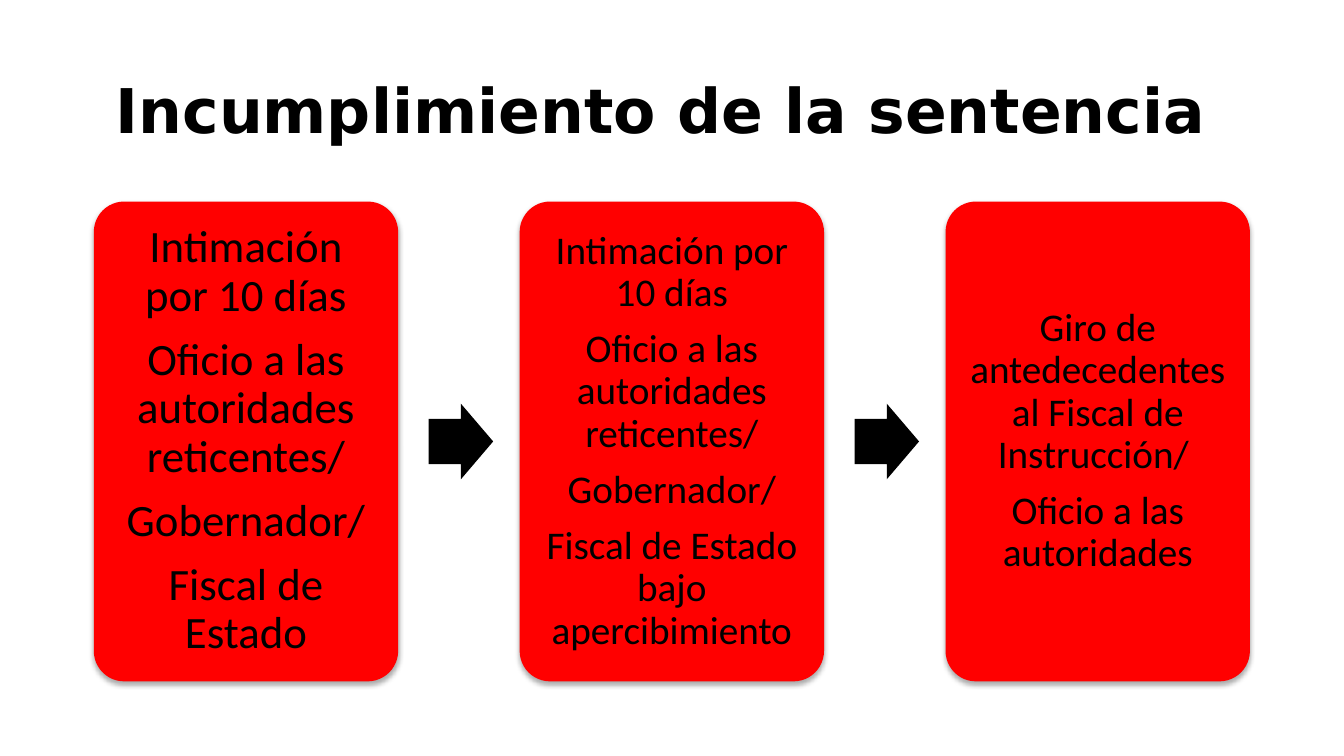
from lxml import etree
from pptx import Presentation
from pptx.dml.color import RGBColor
from pptx.enum import shapes, text
from pptx.oxml import ns
from pptx.util import Pt

# Content
TITLE = "Incumplimiento de la sentencia "
STEPS = [  # font size, inset, paragraphs
    (32, 9.6, ["Intimación por 10 días", "Oficio a las autoridades reticentes/",
               "Gobernador/", "Fiscal de Estado"]),
    (28, 8.4, ["Intimación por 10 días", "Oficio a las autoridades reticentes/",
               "Gobernador/", "Fiscal de Estado bajo apercibimiento"]),
    (28, 8.4, ["Giro de antedecedentes al Fiscal de Instrucción/ ",
               "Oficio a las autoridades"]),
]
RED, BLACK = "FF0000", "000000"

# Layout in points
PAGE_W, PAGE_H = 960, 540
CARD_X, CARD_Y, CARD_W, CARD_H = 67, 144, 217.4, 342.7
PITCH = 304.2
ARROW_W, ARROW_H, ARROW_GAP = 46.1, 54, 21.8


def color(value):
    return RGBColor.from_string(value)


def add_block(page, kind, x, y, w, h, fill, adjustments):
    block = page.shapes.add_shape(kind, Pt(x), Pt(y), Pt(w), Pt(h))
    block.shadow.inherit = False
    block.fill.solid()
    block.fill.fore_color.rgb = color(fill)
    block.line.fill.background()
    for index, value in enumerate(adjustments):
        block.adjustments[index] = value
    return block


def add_shadow(block):
    effects = block._element.spPr.find(ns.qn("a:effectLst"))
    shadow = etree.SubElement(
        effects, ns.qn("a:outerShdw"), blurRad=str(Pt(3.5)), dist=str(Pt(2.2)),
        dir="5400000", algn="ctr", rotWithShape="0")
    tint = etree.SubElement(shadow, ns.qn("a:srgbClr"), val=BLACK)
    etree.SubElement(tint, ns.qn("a:alpha"), val="32000")


def write(box, lines, font, size, bold=False, space_after=0):
    frame = box.text_frame
    frame.word_wrap = True
    frame.vertical_anchor = text.MSO_ANCHOR.MIDDLE
    frame.text = "\n".join(lines)
    for para in frame.paragraphs:
        para.alignment = text.PP_ALIGN.CENTER
        para.line_spacing = 0.9
        para.space_after = Pt(space_after)
        for span in para.runs:
            span.font.name = font
            span.font.size = Pt(size)
            span.font.bold = bold
            span.font.color.rgb = color(BLACK)


deck = Presentation()
deck.slide_width, deck.slide_height = Pt(PAGE_W), Pt(PAGE_H)
page = deck.slides.add_slide(deck.slide_layouts[6])

# Title
title = page.shapes.add_textbox(Pt(66), Pt(28.8), Pt(828), Pt(104.4))
write(title, [TITLE], "DejaVu Sans", 44, bold=True)

# Steps, with an arrow after each one but the last
for number, (size, inset, lines) in enumerate(STEPS):
    x = CARD_X + number * PITCH
    card = add_block(page, shapes.MSO_SHAPE.ROUNDED_RECTANGLE,
                     x, CARD_Y, CARD_W, CARD_H, RED, [0.1])
    add_shadow(card)
    frame = card.text_frame
    frame.margin_left = frame.margin_right = Pt(inset)
    frame.margin_top = frame.margin_bottom = Pt(inset)
    write(card, lines, "Calibri", size, space_after=0.35 * size)
    if number < len(STEPS) - 1:
        add_block(page, shapes.MSO_SHAPE.RIGHT_ARROW, x + CARD_W + ARROW_GAP,
                  CARD_Y + (CARD_H - ARROW_H) / 2, ARROW_W, ARROW_H, BLACK, [0.6, 0.5])

deck.save("out.pptx")
